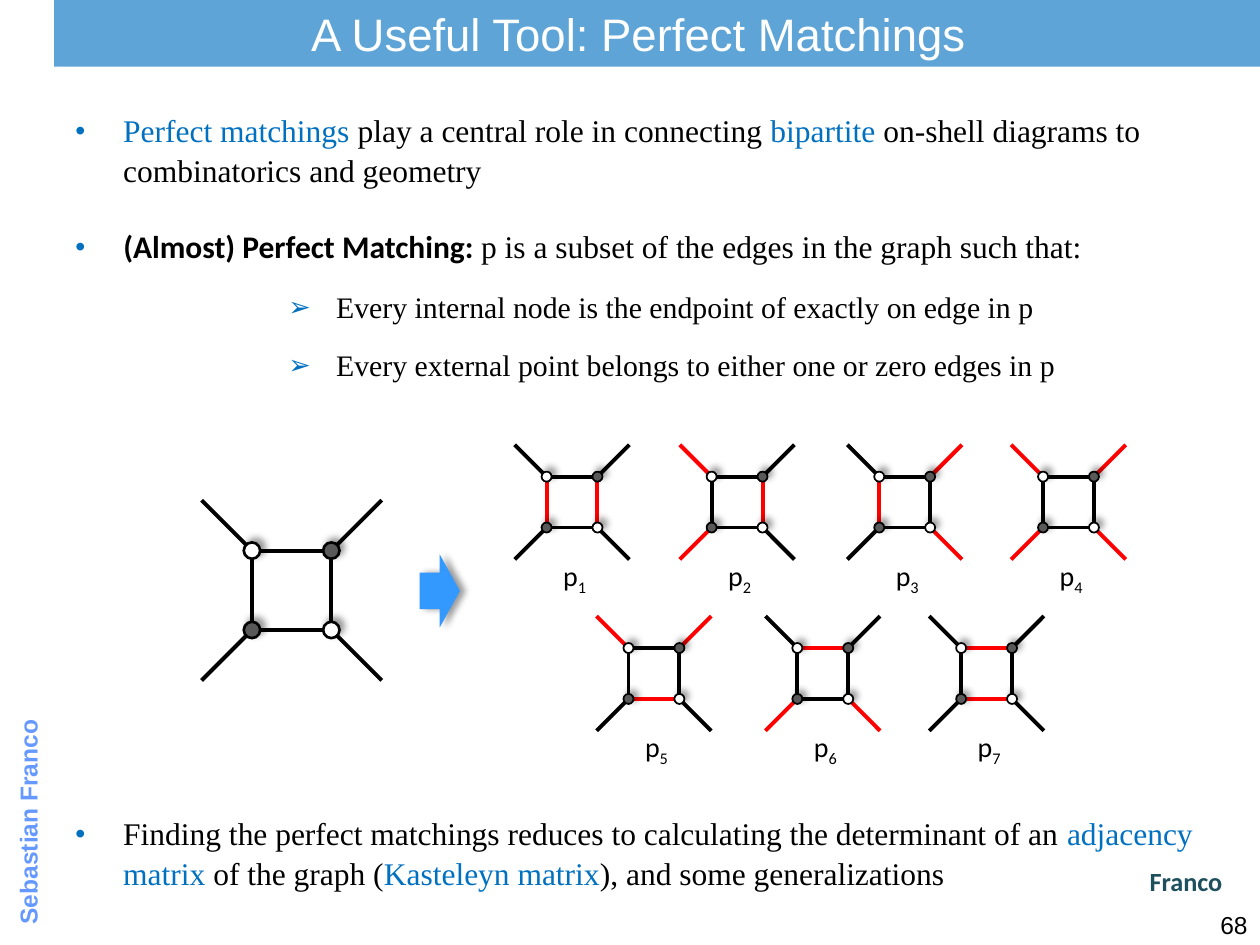
"""Build the perfect matchings slide on a grid of 100 columns by 75 rows."""
import pptx
import pptx.util
import pptx.dml.color
import pptx.enum.shapes
import pptx.enum.text
import pptx.oxml
import pptx.oxml.ns
import lxml.etree

COLS, ROWS = 100, 75
CELL = pptx.util.Inches(10) / COLS
HUES = {
    "black": "000000", "white": "FFFFFF", "gray": "595959", "red": "FF0000",
    "blue": "0070C0", "arrow": "3399FF", "side": "6699FF", "teal": "1D4F5D",
}
SERIF, SANS, TITLE = "Times New Roman", "Calibri", "Arial"
ALIGN = pptx.enum.text.PP_ALIGN
KIND = pptx.enum.shapes.MSO_SHAPE
CORNERS = {"nw": (-1, -1), "ne": (1, -1), "se": (1, 1), "sw": (-1, 1)}
SIDES = {"n": ("nw", "ne"), "e": ("ne", "se"), "s": ("sw", "se"), "w": ("nw", "sw")}
TOP, LOW = 39.85, 53.45
MATCHES = [
    (45.4, TOP, "w e"), (58.5, TOP, "nw sw e"),
    (71.8, TOP, "w ne se"), (84.8, TOP, "nw ne sw se"),
    (51.9, LOW, "s nw ne"), (65.3, LOW, "n sw se"), (78.3, LOW, "n s"),
]
BULLETS = [
    (5, 8.2, 95.4, 5.4, 18, "•", [
        ("Perfect matchings ", "blue"), ("play a central role in connecting ", "black"),
        ("bipartite", "blue"),
        (" on-shell diagrams to combinatorics and geometry", "black")]),
    (5, 17.4, 87.5, 5, 18, "•", [
        ("(Almost) Perfect Matching: ", "black", SANS, True),
        ("p is a subset of the edges in the graph such that:", "black")]),
    (21.9, 22.3, 66.3, 5, 17, "➢", [
        ("Every internal node is the endpoint of exactly on edge in p", "black")]),
    (21.9, 26.9, 66.3, 5, 17, "➢", [
        ("Every external point belongs to either one or zero edges in p", "black")]),
    (5, 64, 93.3, 6.3, 18, "•", [
        ("Finding the perfect matchings reduces to calculating the determinant of an ",
         "black"),
        ("adjacency matrix", "blue"), (" of the graph (", "black"),
        ("Kasteleyn matrix", "blue"), ("), and some generalizations", "black")]),
]


def grid(*spots):
    """Turn grid counts into slide lengths."""
    return [round(spot * CELL) for spot in spots]


def tint(name):
    """Look up a colour by name."""
    return pptx.dml.color.RGBColor.from_string(HUES[name])


def child(node, tag, **attrs):
    """Append a drawing element."""
    made = lxml.etree.SubElement(node, pptx.oxml.ns.qn("a:" + tag))
    for key, val in attrs.items():
        made.set(key, str(val))
    return made


def style(font, size, hue, face, bold=None):
    """Set the look of a font."""
    font.size, font.name, font.bold = pptx.util.Pt(size), face, bold
    font.color.rgb = tint(hue)


def text(shapes, box, words, size, hue, face, align=ALIGN.LEFT, bold=None):
    """Add a text box of one paragraph."""
    made = shapes.add_textbox(*grid(*box))
    made.text_frame.word_wrap = True
    para = made.text_frame.paragraphs[0]
    para.alignment = align
    style(para.font, size, hue, face, bold)
    if words:
        para.add_run().text = words
    return made


def bullet(shapes, left, top, wide, high, size, mark, runs):
    """Add a bulleted paragraph with coloured runs."""
    made = shapes.add_textbox(*grid(left, top, wide, high))
    made.text_frame.word_wrap = True
    para = made.text_frame.paragraphs[0]
    para.line_spacing = 1.05
    props = para._p.get_or_add_pPr()
    hang = pptx.util.Inches(0.38)
    props.set("marL", str(hang))
    props.set("indent", str(-hang))
    child(child(props, "buClr"), "srgbClr", val=HUES["blue"])
    child(props, "buSzPct", val=90000)
    child(props, "buFont", typeface=TITLE)
    child(props, "buChar", char=mark)
    para.font.size = pptx.util.Pt(size)
    for words, hue, *rest in runs:
        run = para.add_run()
        run.text = words
        face, bold = rest or (SERIF, None)
        style(run.font, size, hue, face, bold)


def shape(shapes, kind, box, fill, line=None, turn=None):
    """Add a filled shape, with a shadow cast toward turn degrees."""
    made = shapes.add_shape(kind, *grid(*box))
    made.shadow.inherit = False
    made.fill.solid()
    made.fill.fore_color.rgb = tint(fill)
    if line:
        made.line.color.rgb = tint("black")
        made.line.width = pptx.util.Pt(line)
    else:
        made.line.fill.background()
    if turn is not None:
        glow = made._element.spPr.find(pptx.oxml.ns.qn("a:effectLst"))
        cast = child(glow, "outerShdw", blurRad=pptx.util.Pt(4), dist=pptx.util.Pt(3),
                     dir=turn * 60000, algn="ctr", rotWithShape=0)
        child(child(cast, "srgbClr", val=HUES["black"]), "alpha", val=40000)
    return made


def edge(shapes, start, end, hue):
    """Add a straight graph edge."""
    made = shapes.add_connector(pptx.enum.shapes.MSO_CONNECTOR.STRAIGHT,
                                *grid(*start, *end))
    made.line.color.rgb = tint(hue)
    made.line.width = pptx.util.Pt(2.25)
    child(made._element.spPr, "effectLst")


def graph(shapes, x, y, half, reach, dot, line, chosen=()):
    """Draw a square graph with four legs, its chosen edges in red."""
    def hue(name):
        return "red" if name in chosen else "black"

    nodes = {key: (x + dx * half, y + dy * half) for key, (dx, dy) in CORNERS.items()}
    for name, (one, two) in SIDES.items():
        (ax, ay), (bx, by) = nodes[one], nodes[two]
        gap = dot / 2
        dx, dy = (gap, 0) if ay == by else (0, gap)
        edge(shapes, (ax + dx, ay + dy), (bx - dx, by - dy), hue(name))
    for key, (dx, dy) in CORNERS.items():
        edge(shapes, nodes[key], (x + dx * reach, y + dy * reach), hue(key))
    for key, (nx, ny) in nodes.items():
        fill = "white" if key in ("nw", "se") else "gray"
        shape(shapes, KIND.OVAL, (nx - dot / 2, ny - dot / 2, dot, dot), fill, line, 315)


def label(shapes, x, y, index):
    """Add a matching's name with its subscript."""
    made = text(shapes, (x - 2.4, y, 5.2, 5), "p", 16, "black", SANS, ALIGN.CENTER)
    run = made.text_frame.paragraphs[0].add_run()
    run.text = str(index)
    run.font._element.set("baseline", "-25000")


def frame(shapes):
    """Add the title band, the side name and the page number."""
    side = text(shapes, (-12.8, 56, 31.7, 5), "Sebastian Franco", 14, "side", TITLE,
                bold=True)
    side.rotation = 270
    text(shapes, (95, 71.7, 5, 3.3), "68", 14, "black", TITLE, ALIGN.RIGHT)
    band = shape(shapes, KIND.RECTANGLE, (4.3, 0, 95.7, 5.3), "blue")
    hue = band._element.spPr.find(".//" + pptx.oxml.ns.qn("a:srgbClr"))
    child(hue, "alpha", val=63000)
    text(shapes, (16.2, 0, 69, 5.4), "A Useful Tool: Perfect Matchings", 26, "white",
         TITLE, ALIGN.CENTER)


def main():
    """Build and save the slide."""
    deck = pptx.Presentation()
    deck.slide_width, deck.slide_height = grid(COLS, ROWS)
    shapes = deck.slides.add_slide(deck.slide_layouts[6]).shapes
    frame(shapes)
    for item in BULLETS:
        bullet(shapes, *item)
    graph(shapes.add_group_shape().shapes, 23.15, 46.85, 3.15, 7.15, 1.3, 1.5)
    shape(shapes, KIND.RIGHT_ARROW, (33.3, 44, 3.2, 5.8), "arrow", turn=0)
    text(shapes, (35.5, 68.2, 62.5, 4.2), "Franco", 15, "teal", SANS, ALIGN.RIGHT, True)
    group = shapes.add_group_shape().shapes
    for index, (x, y, chosen) in enumerate(MATCHES, 1):
        graph(group, x, y, 2.02, 4.55, 0.8, 1, chosen.split())
        label(group, x, y + 4, index)
    deck.save("out.pptx")


if __name__ == "__main__":
    main()
